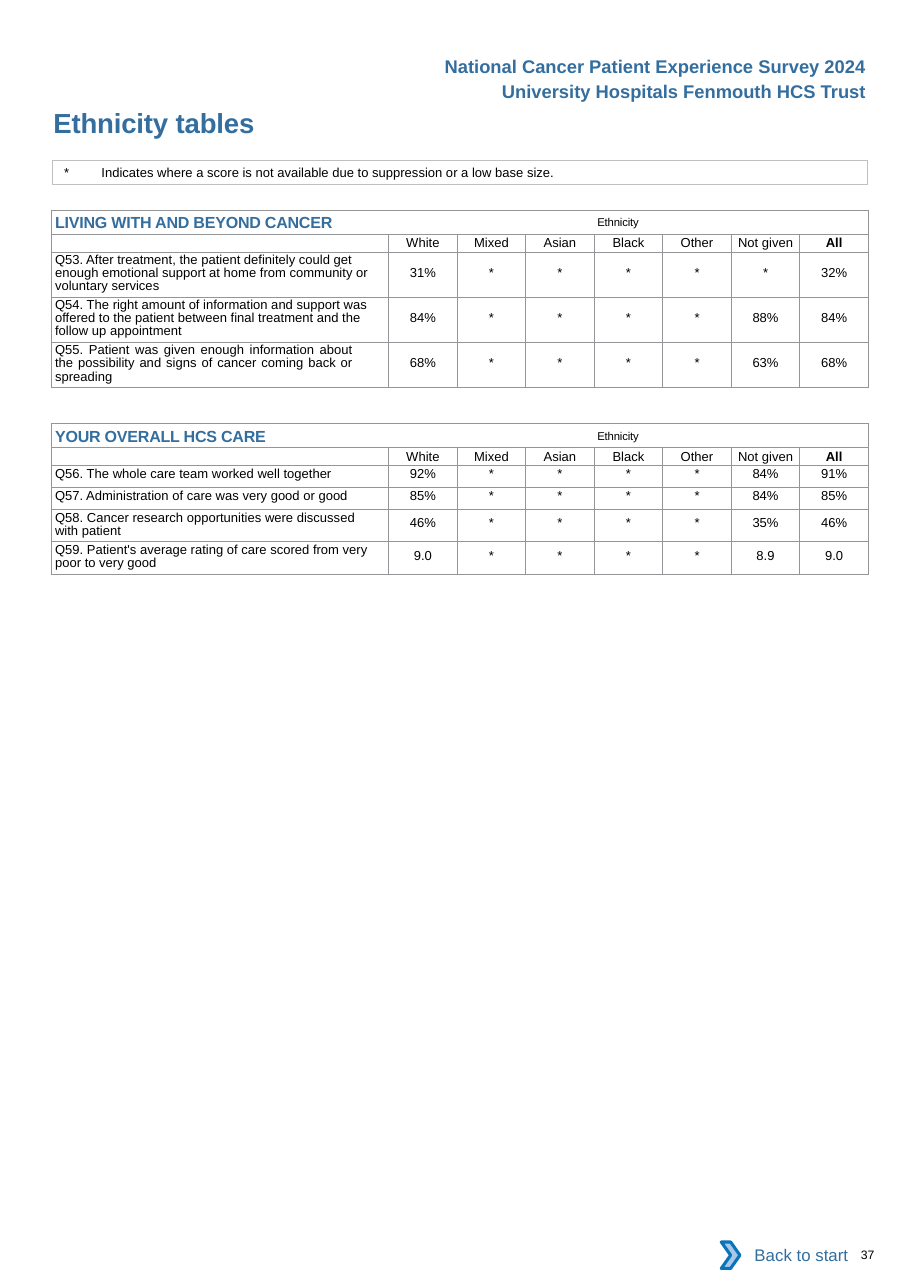
import pptx
import pptx.util
import pptx.dml.color
import pptx.enum.shapes
import pptx.enum.text
import pptx.oxml
import lxml.etree
from pptx.util import Cm, Pt

ALIGN = pptx.enum.text.PP_ALIGN
ANCHOR = pptx.enum.text.MSO_ANCHOR
SHAPE = pptx.enum.shapes.MSO_SHAPE
COLORS = {
    "heading": "336E9F",
    "text": "000000",
    "grid": "939598",
    "note_line": "BFBFBF",
    "chevron_fill": "A8C7E9",
    "chevron_line": "0A74BB",
    "paper": "FFFFFF",
}
FORMATS = {
    "title": {"size": Pt(18), "bold": True},
    "survey": {"size": Pt(12), "bold": True},
    "section": {"size": Pt(10.5), "bold": True},
    "group": {"size": Pt(12.8), "bold": False},
    "table": {"size": Pt(8.5), "bold": False},
    "total": {"size": Pt(8.5), "bold": True},
    "link": {"size": Pt(11), "bold": False},
    "page": {"size": Pt(8), "bold": False},
}
NO_MARGINS = {"margin_left": 0, "margin_right": 0, "margin_top": 0, "margin_bottom": 0}
GROUPS = ["White", "Mixed", "Asian", "Black", "Other", "Not given", "All"]
SECTIONS = [
    ("LIVING WITH AND BEYOND CANCER", 4.84, [
        ("Q53. After treatment, the patient definitely could get enough emotional support "
         "at home from community or voluntary services",
         "31% * * * * * 32%", 1.04, 0.31, 0, ALIGN.LEFT),
        ("Q54. The right amount of information and support was offered to the patient "
         "between final treatment and the follow up appointment",
         "84% * * * * 88% 84%", 1.04, 0.31, 0, ALIGN.LEFT),
        ("Q55. Patient was given enough information about the possibility and signs of "
         "cancer coming back or spreading",
         "68% * * * * 63% 68%", 1.04, 0.31, 0.83, ALIGN.JUSTIFY),
    ]),
    ("YOUR OVERALL HCS CARE", 9.76, [
        ("Q56. The whole care team worked well together",
         "92% * * * * 84% 91%", 0.51, 0.03, 0, ALIGN.LEFT),
        ("Q57. Administration of care was very good or good",
         "85% * * * * 84% 85%", 0.51, 0.03, 0, ALIGN.LEFT),
        ("Q58. Cancer research opportunities were discussed with patient",
         "46% * * * * 35% 46%", 0.74, 0.15, 0.6, ALIGN.LEFT),
        ("Q59. Patient's average rating of care scored from very poor to very good",
         "9.0 * * * * 8.9 9.0", 0.74, 0.15, 0, ALIGN.LEFT),
    ]),
]


def write(paragraph, text, style, color="text", **details):
    run = paragraph.add_run()
    run.text = text
    for attribute, value in {"name": "Arial", **FORMATS[style]}.items():
        setattr(run.font, attribute, value)
    run.font.color.rgb = pptx.dml.color.RGBColor.from_string(COLORS[color])
    for attribute, value in details.items():
        run._r.get_or_add_rPr().set(attribute, str(value))


def add_tab(paragraph, position):
    tabs = lxml.etree.SubElement(paragraph._p.get_or_add_pPr(), pptx.oxml.ns.qn("a:tabLst"))
    lxml.etree.SubElement(tabs, pptx.oxml.ns.qn("a:tab"), pos=str(Cm(position)), algn="l")


presentation = pptx.Presentation()
presentation.slide_width = Cm(20.98)
presentation.slide_height = Cm(29.69)
slide = presentation.slides.add_slide(presentation.slide_layouts[5])

title = slide.shapes.title
title_format = {"left": Cm(1.2), "top": Cm(2.44), "width": Cm(11.43), "height": Cm(0.76)}
for attribute, value in title_format.items():
    setattr(title, attribute, value)
frame_format = {**NO_MARGINS, "margin_left": Cm(0.03), "vertical_anchor": ANCHOR.TOP,
                "auto_size": pptx.enum.text.MSO_AUTO_SIZE.NONE}
for attribute, value in frame_format.items():
    setattr(title.text_frame, attribute, value)
heading = title.text_frame.paragraphs[0]
heading.alignment = ALIGN.LEFT
write(heading, "Ethnicity tables", "title", "heading", spc=-10)

for line, top in [("National Cancer Patient Experience Survey 2024", 1.15),
                  ("University Hospitals Fenmouth HCS Trust", 1.73)]:
    survey = slide.shapes.add_textbox(Cm(9), Cm(top), Cm(11.22), Cm(0.76))
    survey.text_frame.word_wrap = True
    survey_line = survey.text_frame.paragraphs[0]
    survey_line.alignment = ALIGN.RIGHT
    write(survey_line, line, "survey", "heading")

note = slide.shapes.add_shape(SHAPE.RECTANGLE, Cm(1.2), Cm(3.69), Cm(18.81), Cm(0.57))
note.shadow.inherit = False
note.fill.background()
note.line.color.rgb = pptx.dml.color.RGBColor.from_string(COLORS["note_line"])
note.line.width = Pt(0.5)
note_format = {**NO_MARGINS, "margin_left": Cm(0.28), "vertical_anchor": ANCHOR.MIDDLE}
for attribute, value in note_format.items():
    setattr(note.text_frame, attribute, value)
explanation = note.text_frame.paragraphs[0]
explanation.alignment = ALIGN.LEFT
add_tab(explanation, 0.86)
write(explanation, "*\tIndicates where a score is not available due to suppression or a low base size.",
      "table")

for section, top, questions in SECTIONS:
    heights = [0.56, 0.41] + [question[2] for question in questions]
    scores = slide.shapes.add_table(len(heights), 8, Cm(1.19), Cm(top),
                                    Cm(18.83), Cm(sum(heights))).table
    scores.first_row = False
    scores.horz_banding = False
    for column_number, column in enumerate(scores.columns):
        column.width = Cm(1.58 if column_number else 7.77)
    for row, height in zip(scores.rows, heights):
        row.height = Cm(height)
    for cell in scores.iter_cells():
        for attribute, value in NO_MARGINS.items():
            setattr(cell, attribute, value)
        cell.fill.background()
        for position, side in enumerate(["lnL", "lnR", "lnT", "lnB"]):
            border = pptx.oxml.parse_xml(
                f'<a:{side} xmlns:a="http://schemas.openxmlformats.org/drawingml/2006/main" '
                f'w="{Pt(0.5)}"><a:solidFill><a:srgbClr val="{COLORS["grid"]}"/>'
                f'</a:solidFill></a:{side}>')
            cell._tc.get_or_add_tcPr().insert(position, border)

    section_cell = scores.cell(0, 0)
    section_cell.merge(scores.cell(0, 7))
    section_cell.vertical_anchor = ANCHOR.MIDDLE
    section_cell.margin_left = Cm(0.08)
    section_line = section_cell.text_frame.paragraphs[0]
    add_tab(section_line, 12.5)
    write(section_line, section + "\t", "section", "heading", spc=-10)
    write(section_line, "Ethnicity", "group", spc=-10, baseline=10000)

    corner = scores.cell(1, 0).text_frame.paragraphs[0]
    lxml.etree.SubElement(corner._p, pptx.oxml.ns.qn("a:endParaRPr"), sz="850")
    for column_number, group in enumerate(GROUPS, 1):
        group_cell = scores.cell(1, column_number)
        group_cell.vertical_anchor = ANCHOR.MIDDLE
        group_line = group_cell.text_frame.paragraphs[0]
        group_line.alignment = ALIGN.CENTER
        group_line.line_spacing = Pt(9.9)
        write(group_line, group, "total" if group == "All" else "table")

    for row_number, question in enumerate(questions, 2):
        wording, values, height, value_margin, right_margin, alignment = question
        wording_cell = scores.cell(row_number, 0)
        wording_cell.margin_left = Cm(0.08)
        wording_cell.margin_top = Cm(0.05 if height > 0.6 else 0.03)
        wording_cell.margin_right = Cm(right_margin)
        wording_line = wording_cell.text_frame.paragraphs[0]
        wording_line.alignment = alignment
        if height > 0.6:
            wording_line.line_spacing = Pt(8.6)
        write(wording_line, wording, "table")
        for column_number, score in enumerate(values.split(), 1):
            score_cell = scores.cell(row_number, column_number)
            score_cell.margin_top = Cm(value_margin)
            score_line = score_cell.text_frame.paragraphs[0]
            score_line.alignment = ALIGN.CENTER
            write(score_line, score, "table")

back_link = slide.shapes.add_group_shape()
link_label = back_link.shapes.add_shape(SHAPE.RECTANGLE, Cm(16.81), Cm(28.4), Cm(3), Cm(1.07))
chevron = back_link.shapes.add_shape(SHAPE.CHEVRON, Cm(16.63), Cm(28.63), Cm(0.43), Cm(0.61))
for part, fill in [(link_label, "paper"), (chevron, "chevron_fill")]:
    part.shadow.inherit = False
    part.fill.solid()
    part.fill.fore_color.rgb = pptx.dml.color.RGBColor.from_string(COLORS[fill])
link_label.line.fill.background()
chevron.line.color.rgb = pptx.dml.color.RGBColor.from_string(COLORS["chevron_line"])
chevron.line.width = Pt(2)
link_line = link_label.text_frame.paragraphs[0]
link_line.alignment = ALIGN.RIGHT
write(link_line, "Back to start", "link", "heading")

page = slide.shapes.add_textbox(Cm(19.6), Cm(28.76), Cm(1.3), Cm(0.33))
for attribute, value in {**NO_MARGINS, "margin_left": Cm(0.25), "word_wrap": True}.items():
    setattr(page.text_frame, attribute, value)
write(page.text_frame.paragraphs[0], "37", "page")

presentation.save("out.pptx")
